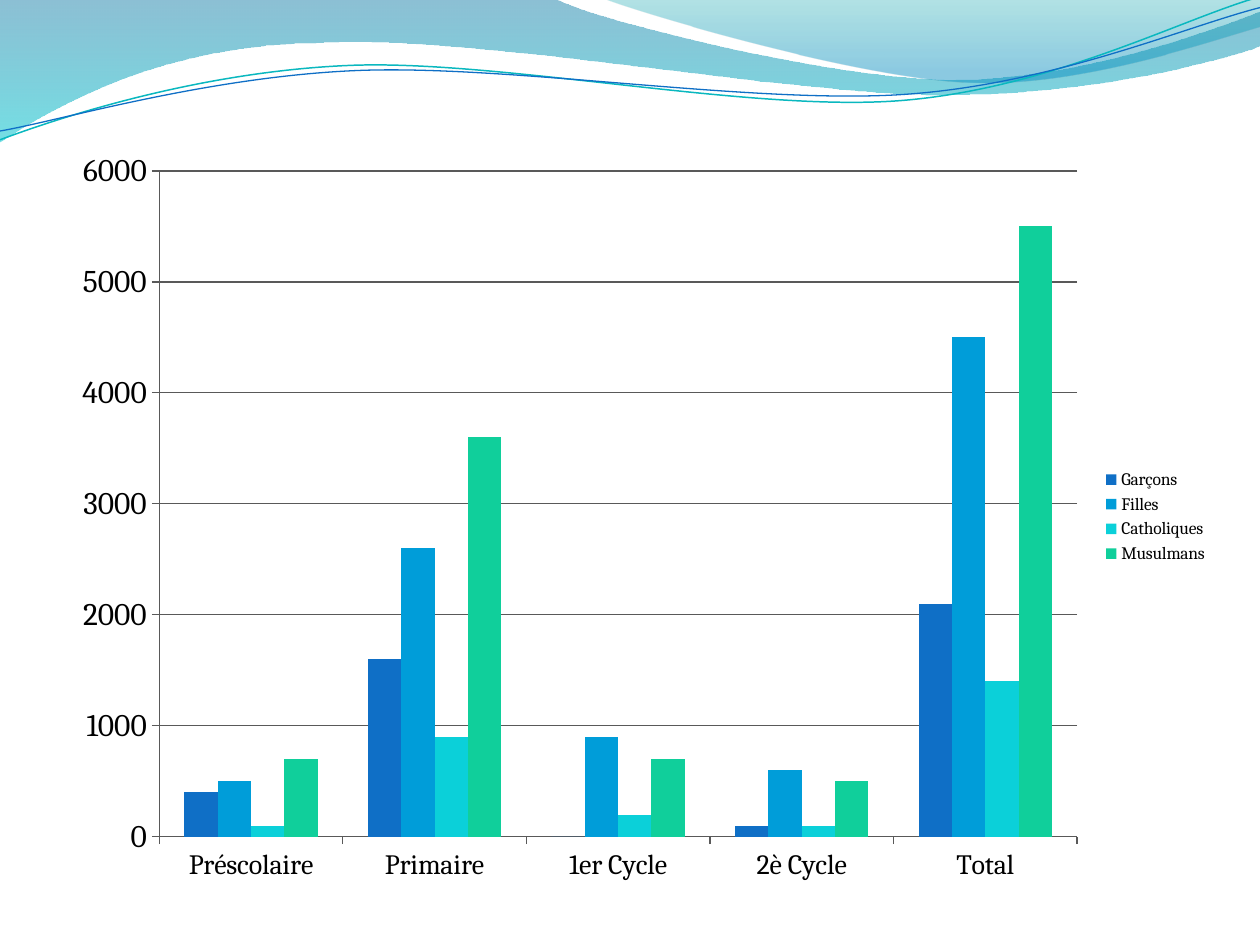
from dataclasses import dataclass
from math import cos, radians, sin

from lxml.etree import SubElement
from pptx import Presentation
from pptx.chart.data import CategoryChartData
from pptx.dml.color import RGBColor
from pptx.enum.chart import XL_CHART_TYPE, XL_LEGEND_POSITION, XL_TICK_MARK
from pptx.oxml.ns import qn
from pptx.util import Inches, Pt


@dataclass(frozen=True)
class Theme:
    font: str = "Cambria"
    text: str = "000000"
    rule: str = "595959"
    legend_size: int = 10
    category_size: int = 16
    value_size: int = 18
    series: tuple = ("0F6FC6", "009DD9", "0BD0D9", "10CF9B")
    # Gradient stops: position, colour, opacity in percent
    wide_wave: tuple = ((0, "0074A1", 45), (1, "00C6CF", 55))
    right_wave: tuple = ((0, "00A1A9", 30), (0.8, "008BBF", 45))
    teal_line: str = "0AB8BF"
    blue_line: str = "0F6FC6"


THEME = Theme()
CURVE_ROTATION = 357.3

# Frames are left, top, width, height. Each outline is a start point,
# then line ends (2 numbers) or Bézier curves (6 numbers).
WIDE_FRAME = (-0.01, -0.01, 10.02, 1.14)
WIDE_WAVE = [
    (0, -0.01), (4.4, -0.01),
    (4.76, 0.17, 6.64, 0.63, 7.58, 0.63), (8.53, 0.63, 9.58, 0.26, 10, 0.09),
    (10.01, 0.36),
    (9.83, 0.44, 8.7, 0.76, 7.46, 0.75), (6.22, 0.75, 3.82, 0.28, 2.57, 0.34),
    (1.29, 0.35, 0.46, 0.83, -0.01, 1.13), (0, -0.01),
]
RIGHT_FRAME = (4.79, -0.01, 5.21, 0.7)
RIGHT_WAVE = [
    (4.79, -0.01),
    (5.09, 0.11, 6.82, 0.62, 7.69, 0.65), (8.56, 0.69, 9.61, 0.32, 10, 0.21),
    (10, 0), (4.79, -0.01),
]
TEAL_FRAME = (-0.02, 0.22, 10.02, 0.71)
TEAL_CURVE = [
    (0, 1.11),
    (0.48, 0.93, 1.58, 0.57, 2.77, 0.52), (3.95, 0.47, 5.93, 0.89, 7.13, 0.8),
    (8.33, 0.71, 9.38, 0.15, 9.98, -0.02),
]
BLUE_FRAME = (-0.02, 0.3, 10.03, 0.58)
BLUE_CURVE = [
    (0, 1.04),
    (0.47, 0.96, 1.64, 0.61, 2.83, 0.56), (4.03, 0.51, 5.97, 0.83, 7.17, 0.75),
    (8.36, 0.67, 9.41, 0.21, 10, 0.06),
]

LEVELS = ["Préscolaire", "Primaire", "1er Cycle", "2è Cycle", "Total"]
PUPILS = {
    "Garçons": (400, 1600, 0, 100, 2100),
    "Filles": (500, 2600, 900, 600, 4500),
    "Catholiques": (100, 900, 200, 100, 1400),
    "Musulmans": (700, 3600, 700, 500, 5500),
}


def color(code):
    return RGBColor.from_string(code)


def local_point(x, y, frame, rotation):
    """Turn a slide position into one inside the unrotated frame."""
    left, top, width, height = frame
    angle = radians(-rotation)
    across, down = x - left - width / 2, y - top - height / 2
    return (
        Inches(width / 2 + across * cos(angle) - down * sin(angle)),
        Inches(height / 2 + across * sin(angle) + down * cos(angle)),
    )


def add_outline(slide, outline, frame, close=False, rotation=0):
    builder = slide.shapes.build_freeform(0, 0)
    builder.add_line_segments([(Inches(1), Inches(1))], close=False)
    shape = builder.convert_to_shape()
    shape.shadow.inherit = False
    shape.left, shape.top, shape.width, shape.height = map(Inches, frame)
    shape.rotation = rotation

    # Curved segments inside the frame
    outline_path = next(shape._element.spPr.iter(qn("a:path")))
    for child in list(outline_path):
        outline_path.remove(child)
    outline_path.set("w", str(shape.width))
    outline_path.set("h", str(shape.height))
    for index, segment in enumerate(outline):
        tag = "a:cubicBezTo" if len(segment) == 6 else "a:lnTo" if index else "a:moveTo"
        command = SubElement(outline_path, qn(tag))
        for x, y in zip(segment[::2], segment[1::2]):
            across, down = local_point(x, y, frame, rotation)
            SubElement(command, qn("a:pt"), x=str(across), y=str(down))
    if close:
        SubElement(outline_path, qn("a:close"))
    return shape


def add_wave(slide, outline, frame, stops):
    shape = add_outline(slide, outline, frame, close=True)
    shape.fill.gradient()
    shape.fill.gradient_angle = 270
    for stop, (position, code, _) in zip(shape.fill.gradient_stops, stops):
        stop.position = position
        stop.color.rgb = color(code)
    # Opacity of each gradient stop
    for element, (_, _, opacity) in zip(shape._element.spPr.iter(qn("a:srgbClr")), stops):
        SubElement(element, qn("a:alpha"), val=str(opacity * 1000))
    shape.line.fill.background()


def add_curve(slide, outline, frame, code, width):
    shape = add_outline(slide, outline, frame, rotation=CURVE_ROTATION)
    shape.fill.background()
    shape.line.color.rgb = color(code)
    shape.line.width = Pt(width)


def format_axis(axis, size):
    axis.major_tick_mark = XL_TICK_MARK.OUTSIDE
    axis.minor_tick_mark = XL_TICK_MARK.NONE
    axis.tick_labels.font.size = Pt(size)
    axis.format.line.color.rgb = color(THEME.rule)
    axis.format.line.width = Pt(0.75)


def add_pupil_chart(slide):
    data = CategoryChartData()
    data.categories = LEVELS
    for name, values in PUPILS.items():
        data.add_series(name, values)
    chart = slide.shapes.add_chart(
        XL_CHART_TYPE.COLUMN_CLUSTERED,
        Inches(0.47), Inches(1.09), Inches(9.22), Inches(6.02), data,
    ).chart
    chart.has_title = False
    chart.font.name = THEME.font
    chart.font.size = Pt(THEME.legend_size)
    chart.font.color.rgb = color(THEME.text)

    # Columns
    plot = chart.plots[0]
    plot.gap_width = 150
    plot.overlap = 0
    plot.vary_by_categories = False
    for series, code in zip(plot.series, THEME.series):
        series.format.fill.solid()
        series.format.fill.fore_color.rgb = color(code)

    # Axes and gridlines
    format_axis(chart.category_axis, THEME.category_size)
    format_axis(chart.value_axis, THEME.value_size)
    chart.value_axis.minimum_scale = 0
    chart.value_axis.maximum_scale = 6000
    chart.value_axis.major_unit = 1000
    grid_line = chart.value_axis.major_gridlines.format.line
    grid_line.color.rgb = color(THEME.rule)
    grid_line.width = Pt(0.75)

    # Legend
    chart.has_legend = True
    chart.legend.position = XL_LEGEND_POSITION.RIGHT
    chart.legend.include_in_layout = False


def main():
    deck = Presentation()
    deck.slide_width, deck.slide_height = Inches(10), Inches(7.5)
    slide = deck.slides.add_slide(deck.slide_layouts[6])

    # Wave decoration along the top
    add_wave(slide, WIDE_WAVE, WIDE_FRAME, THEME.wide_wave)
    add_wave(slide, RIGHT_WAVE, RIGHT_FRAME, THEME.right_wave)
    add_curve(slide, TEAL_CURVE, TEAL_FRAME, THEME.teal_line, 0.85)
    add_curve(slide, BLUE_CURVE, BLUE_FRAME, THEME.blue_line, 0.75)

    # Pupils by school level
    add_pupil_chart(slide)
    deck.save("out.pptx")


if __name__ == "__main__":
    main()
